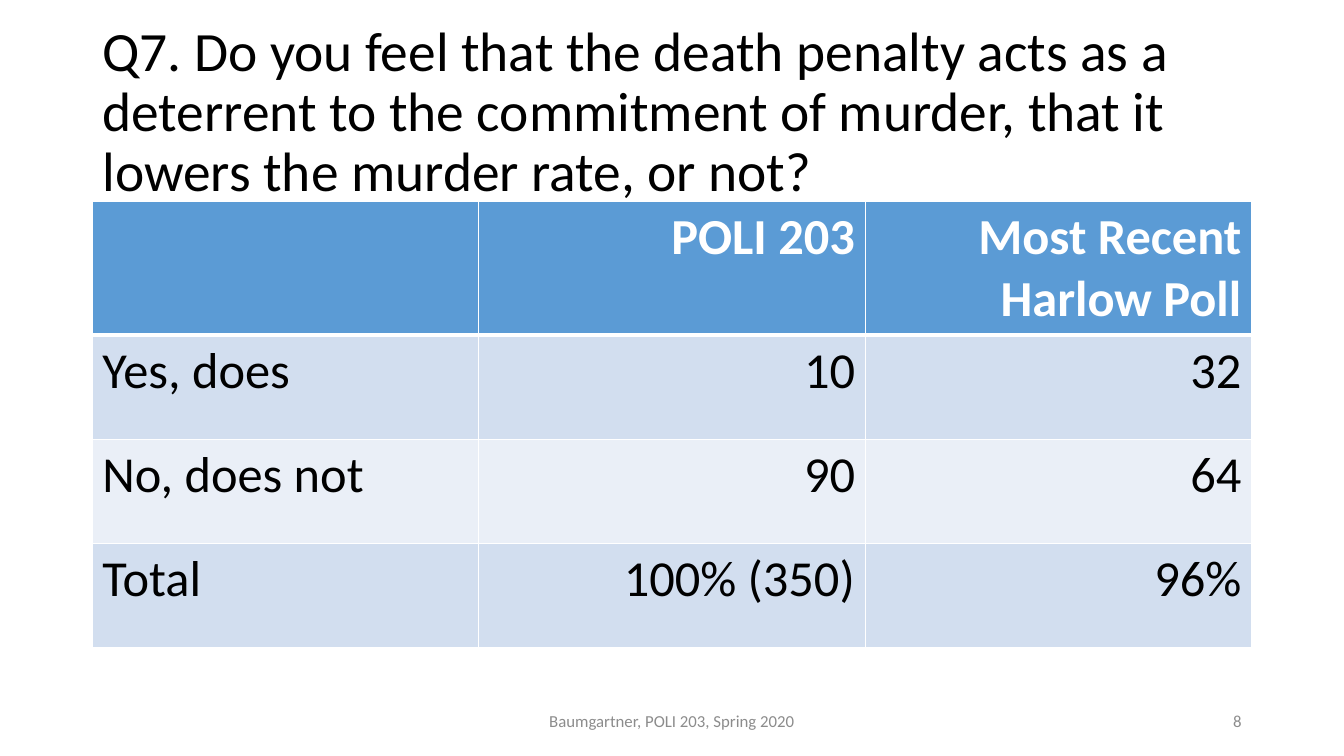
from lxml.etree import SubElement
from pptx import Presentation
from pptx.dml.color import RGBColor
from pptx.enum.text import MSO_ANCHOR as Anchor, MSO_AUTO_SIZE as Fit, PP_ALIGN as Align
from pptx.oxml.ns import qn
from pptx.util import Pt

WHITE, BLACK, GREY = "FFFFFF", "000000", "8C8C8C"
HEAD, BANDS = "5B9BD5", ("D2DEEF", "EAEFF7")


def color(code):
    return RGBColor.from_string(code)


class Deck:
    """Holds the font and the current slide."""
    font = "Calibri"

    def __init__(self, slide):
        self.slide = slide

    def put(self, frame, text, size, ink, align=Align.LEFT, bold=False):
        """Set the text of a frame and format its runs."""
        frame.text = text
        frame.word_wrap = True
        para = frame.paragraphs[0]
        para.alignment = align
        for run in para.runs:
            font = run.font
            font.name, font.size, font.bold = self.font, Pt(size), bold
            font.color.rgb = color(ink)

    def title(self, text, box, size):
        shape = self.slide.shapes.title
        shape.left, shape.top, shape.width, shape.height = map(Pt, box)
        frame = shape.text_frame
        self.put(frame, text, size, BLACK)
        frame.auto_size = Fit.NONE
        frame.vertical_anchor = Anchor.MIDDLE
        frame.paragraphs[0].line_spacing = 0.9

    def label(self, text, box, align):
        frame = self.slide.shapes.add_textbox(*map(Pt, box)).text_frame
        self.put(frame, text, 12, GREY, align)
        frame.vertical_anchor = Anchor.MIDDLE

    def edge(self, cell, row):
        """Draw white cell borders, thick below the header row."""
        props = cell._tc.get_or_add_tcPr()
        widths = {"L": 1, "R": 1, "T": 3 if row == 1 else 1, "B": 3 if row == 0 else 1}
        for side, width in widths.items():
            line = SubElement(props, qn(f"a:ln{side}"), w=str(Pt(width)))
            fill = SubElement(line, qn("a:solidFill"))
            SubElement(fill, qn("a:srgbClr"), val=WHITE)

    def table(self, rows, box, heights, size):
        grid = self.slide.shapes.add_table(len(rows), len(rows[0]), *map(Pt, box)).table
        for r, (texts, height) in enumerate(zip(rows, heights)):
            grid.rows[r].height = Pt(height)
            head = r == 0
            for c, text in enumerate(texts):
                cell = grid.cell(r, c)
                self.put(cell.text_frame, text, size, WHITE if head else BLACK,
                         Align.RIGHT if c else Align.LEFT, head)
                self.edge(cell, r)
                cell.fill.solid()
                cell.fill.fore_color.rgb = color(HEAD if head else BANDS[(r - 1) % 2])


def main():
    prs = Presentation()
    prs.slide_width, prs.slide_height = Pt(960), Pt(540)
    deck = Deck(prs.slides.add_slide(prs.slide_layouts[5]))
    deck.title("Q7. Do you feel that the death penalty acts as a deterrent to the "
               "commitment of murder, that it lowers the murder rate, or not?",
               (66, 28.75, 828, 104.4), 39.6)
    rows = [
        ("", "POLI 203", "Most Recent Harlow Poll"),
        ("Yes, does", "10", "32"),
        ("No, does not", "90", "64"),
        ("Total", "100% (350)", "96%"),
    ]
    deck.table(rows, (66, 144, 828, 318), (95, 74.5, 74.5, 74.5), 36)
    deck.label("Baumgartner, POLI 203, Spring 2020", (318, 500.5, 324, 28.75), Align.CENTER)
    deck.label("8", (678, 500.5, 216, 28.75), Align.RIGHT)
    prs.save("out.pptx")


if __name__ == "__main__":
    main()
